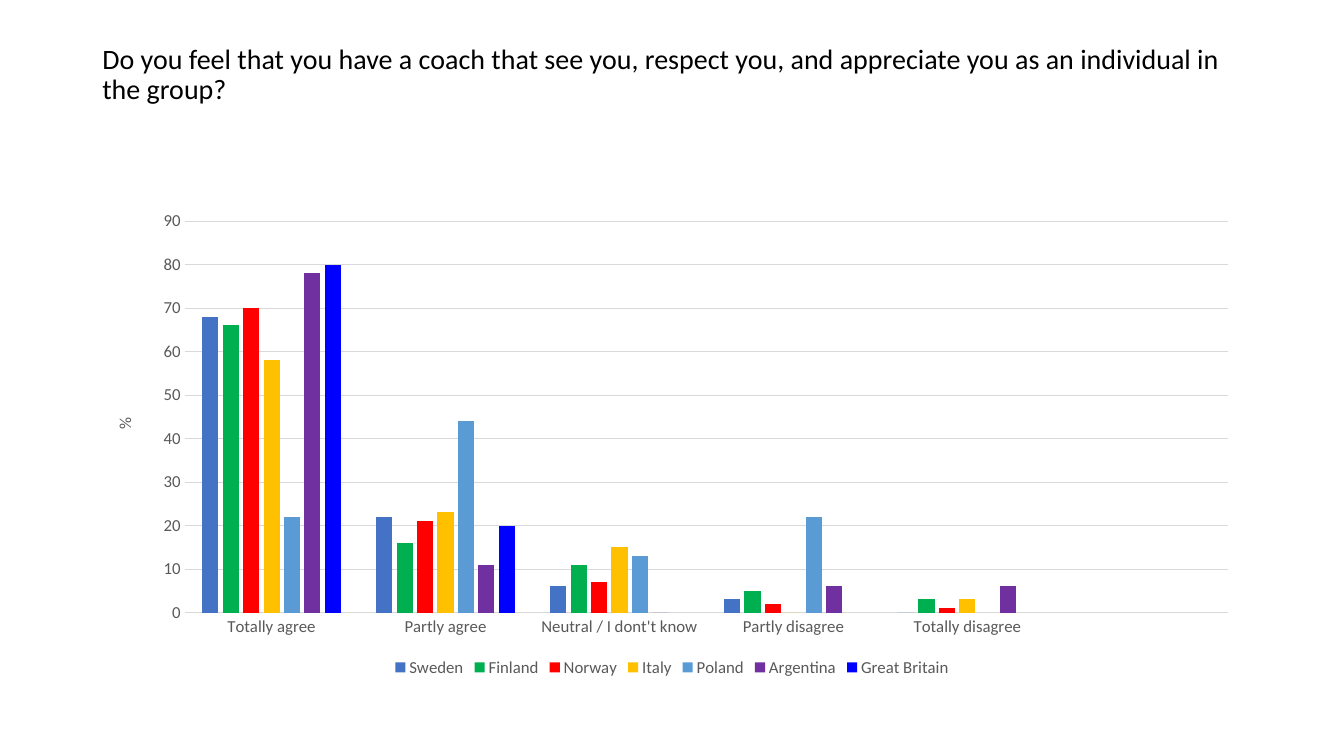
from pptx import Presentation
from pptx.chart.data import CategoryChartData
from pptx.dml.color import RGBColor
from pptx.enum.chart import XL_CHART_TYPE as ChartType, XL_LEGEND_POSITION as LegendPos, XL_TICK_MARK as Tick
from pptx.enum.text import MSO_ANCHOR as Anchor
from pptx.util import Cm, Pt


def color(value):
    return RGBColor.from_string(value)


def style_font(font, size, value):
    font.name = "Calibri"
    font.size = Pt(size)
    font.bold = False
    font.color.rgb = color(value)


GREY = "595959"
LIGHT = "D9D9D9"
LEFT, WIDTH = Cm(2.33), Cm(29.21)

prs = Presentation()
prs.slide_width, prs.slide_height = Cm(33.87), Cm(19.05)
s = prs.slides.add_slide(prs.slide_layouts[6])

tf = s.shapes.add_textbox(LEFT, Cm(1.02), WIDTH, Cm(3.68)).text_frame
tf.word_wrap = True
tf.vertical_anchor = Anchor.TOP
p = tf.paragraphs[0]
p.text = ("Do you feel that you have a coach that see you, respect you, "
          "and appreciate you as an individual in the group?")
p.line_spacing = 0.9
style_font(p.font, 20, "000000")

countries = [
    ("Sweden", "4472C4", [68, 22, 6, 3, 0, None]),
    ("Finland", "00B050", [66, 16, 11, 5, 3, None]),
    ("Norway", "FF0000", [70, 21, 7, 2, 1, None]),
    ("Italy", "FFC000", [58, 23, 15, 0, 3, None]),
    ("Poland", "5B9BD5", [22, 44, 13, 22, None, None]),
    ("Argentina", "7030A0", [78, 11, 0, 6, 6, None]),
    ("Great Britain", "0000FF", [80, 20, None, None, None, None]),
]
data = CategoryChartData()
data.categories = ["Totally agree", "Partly agree", "Neutral / I dont't know",
                   "Partly disagree", "Totally disagree", ""]
for name, _, values in countries:
    data.add_series(name, values)

chart = s.shapes.add_chart(ChartType.COLUMN_CLUSTERED, LEFT, Cm(5.08),
                           WIDTH, Cm(12.09), data).chart
chart.has_title = False
style_font(chart.font, 12, GREY)
chart.has_legend = True
chart.legend.position = LegendPos.BOTTOM
chart.legend.include_in_layout = False
style_font(chart.legend.font, 12, GREY)

plot = chart.plots[0]
plot.gap_width = 219
plot.overlap = -27
plot.vary_by_categories = False
for series, (_, fill, _) in zip(plot.series, countries):
    series.format.fill.solid()
    series.format.fill.fore_color.rgb = color(fill)
    series.invert_if_negative = False

cat, val = chart.category_axis, chart.value_axis
for axis in (cat, val):
    axis.major_tick_mark = axis.minor_tick_mark = Tick.NONE
    style_font(axis.tick_labels.font, 12, GREY)
val.minimum_scale, val.maximum_scale, val.major_unit = 0, 90, 10
val.format.line.fill.background()
for line in (cat.format.line, val.major_gridlines.format.line):
    line.color.rgb = color(LIGHT)
    line.width = Pt(0.75)
p = val.axis_title.text_frame.paragraphs[0]
p.text = "%"
style_font(p.font, 12, GREY)

prs.save("out.pptx")
